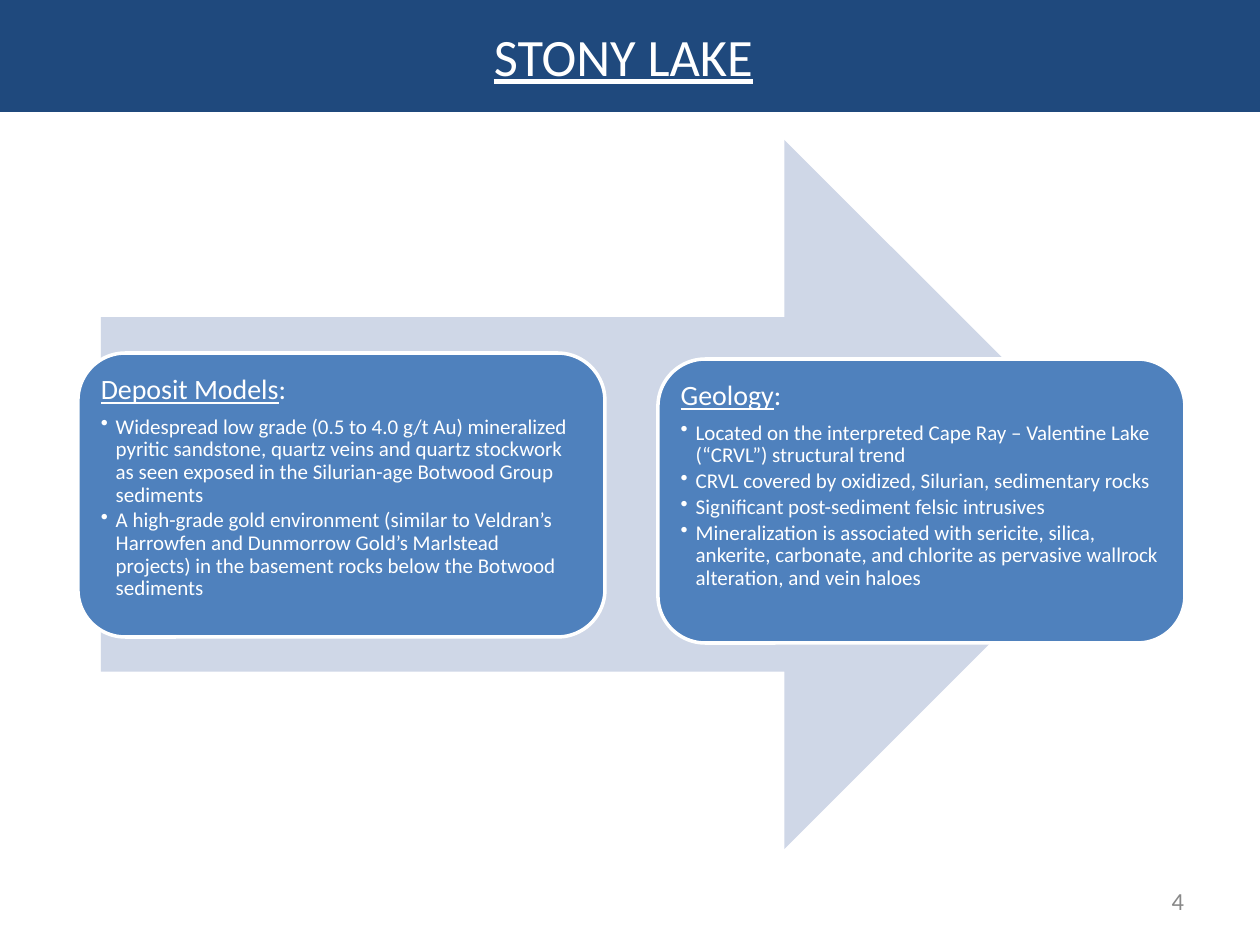
from lxml import etree
from pptx import Presentation
from pptx.dml.color import RGBColor
from pptx.enum.shapes import MSO_SHAPE
from pptx.enum.text import MSO_ANCHOR, PP_ALIGN
from pptx.oxml.ns import qn
from pptx.util import Pt

PX = 914400 / 126
FONT = "Calibri"
WHITE = RGBColor(0xFF, 0xFF, 0xFF)
NAVY = RGBColor(0x1F, 0x49, 0x7D)
BLUE = RGBColor(0x4F, 0x81, 0xBD)
PALE = RGBColor(0xCF, 0xD7, 0xE7)
GREY = RGBColor(0x88, 0x88, 0x88)
RECT = MSO_SHAPE.RECTANGLE
ROUND = MSO_SHAPE.ROUNDED_RECTANGLE
ARROW = MSO_SHAPE.RIGHT_ARROW
TOP, MIDDLE = MSO_ANCHOR.TOP, MSO_ANCHOR.MIDDLE
LEFT, CENTER, RIGHT = PP_ALIGN.LEFT, PP_ALIGN.CENTER, PP_ALIGN.RIGHT

CARDS = [
    (78, 353, "Deposit Models", [
        "Widespread low grade (0.5 to 4.0 g/t Au) mineralized pyritic sandstone, "
        "quartz veins and quartz stockwork as seen exposed in the Silurian-age "
        "Botwood Group sediments",
        "A high-grade gold environment (similar to Veldran’s Harrowfen and "
        "Dunmorrow Gold’s Marlstead\nprojects) in the basement rocks below "
        "the Botwood sediments",
    ]),
    (658, 359, "Geology", [
        "Located on the interpreted Cape Ray – Valentine Lake (“CRVL”) "
        "structural trend",
        "CRVL covered by oxidized, Silurian, sedimentary rocks",
        "Significant post-sediment felsic intrusives",
        "Mineralization is associated with sericite, silica, ankerite, carbonate, "
        "and chlorite as pervasive wallrock alteration, and vein haloes",
    ]),
]


def px(n):
    return round(n * PX)


def add_shape(slide, kind, box, fill, line=None):
    shape = slide.shapes.add_shape(kind, *map(px, box))
    shape.shadow.inherit = False
    shape.fill.solid()
    shape.fill.fore_color.rgb = fill
    if line is None:
        shape.line.fill.background()
    else:
        shape.line.color.rgb = line
        shape.line.width = Pt(2)
    return shape


def set_frame(frame, side, edge, anchor=TOP, wrap=True):
    frame.margin_left = frame.margin_right = px(side)
    frame.margin_top = frame.margin_bottom = px(edge)
    frame.vertical_anchor = anchor
    frame.word_wrap = wrap


def add_bullet(para):
    props = para._p.get_or_add_pPr()
    props.set("marL", str(px(15)))
    props.set("indent", str(px(-15)))
    etree.SubElement(props, qn("a:buChar")).set("char", "•")


def write(para, text, size=12, color=WHITE, line=False, align=LEFT):
    """Append formatted text; a newline becomes a line break."""
    para.alignment = align
    for i, part in enumerate(text.split("\n")):
        if i:
            para.add_line_break()
        run = para.add_run()
        run.text = part
        font = run.font
        font.name, font.size, font.underline = FONT, Pt(size), line
        font.color.rgb = color


def add_label(slide, box, text, anchor=TOP, wrap=True, **style):
    frame = slide.shapes.add_textbox(*map(px, box)).text_frame
    set_frame(frame, 13, 6, anchor, wrap)
    write(frame.paragraphs[0], text, **style)


def add_card(slide, left, top, head, items):
    card = add_shape(slide, ROUND, (left, top, 527, 284), BLUE, WHITE)
    frame = card.text_frame
    set_frame(frame, 9, 9)
    para = frame.paragraphs[0]
    para.line_spacing = 0.9
    write(para, head, size=16, line=True)
    write(para, ":", size=16)
    for i, item in enumerate(items):
        para = frame.add_paragraph()
        para.level = 1
        add_bullet(para)
        para.line_spacing = 0.9
        para.space_before = Pt(1.8 if i else 5.6)
        write(para, item)


def main():
    deck = Presentation()
    deck.slide_width, deck.slide_height = px(1260), px(945)
    slide = deck.slides.add_slide(deck.slide_layouts[6])
    add_shape(slide, ARROW, (101, 140, 1038, 709), PALE)
    for card in CARDS:
        add_card(slide, *card)
    add_shape(slide, RECT, (-1, 0, 1261, 112), NAVY)
    add_label(slide, (480, 18, 287, 77), "STONY LAKE", wrap=False,
              size=30, line=True, align=CENTER)
    add_label(slide, (903, 876, 294, 50), "4", anchor=MIDDLE,
              size=14, color=GREY, align=RIGHT)
    deck.save("out.pptx")


if __name__ == "__main__":
    main()
